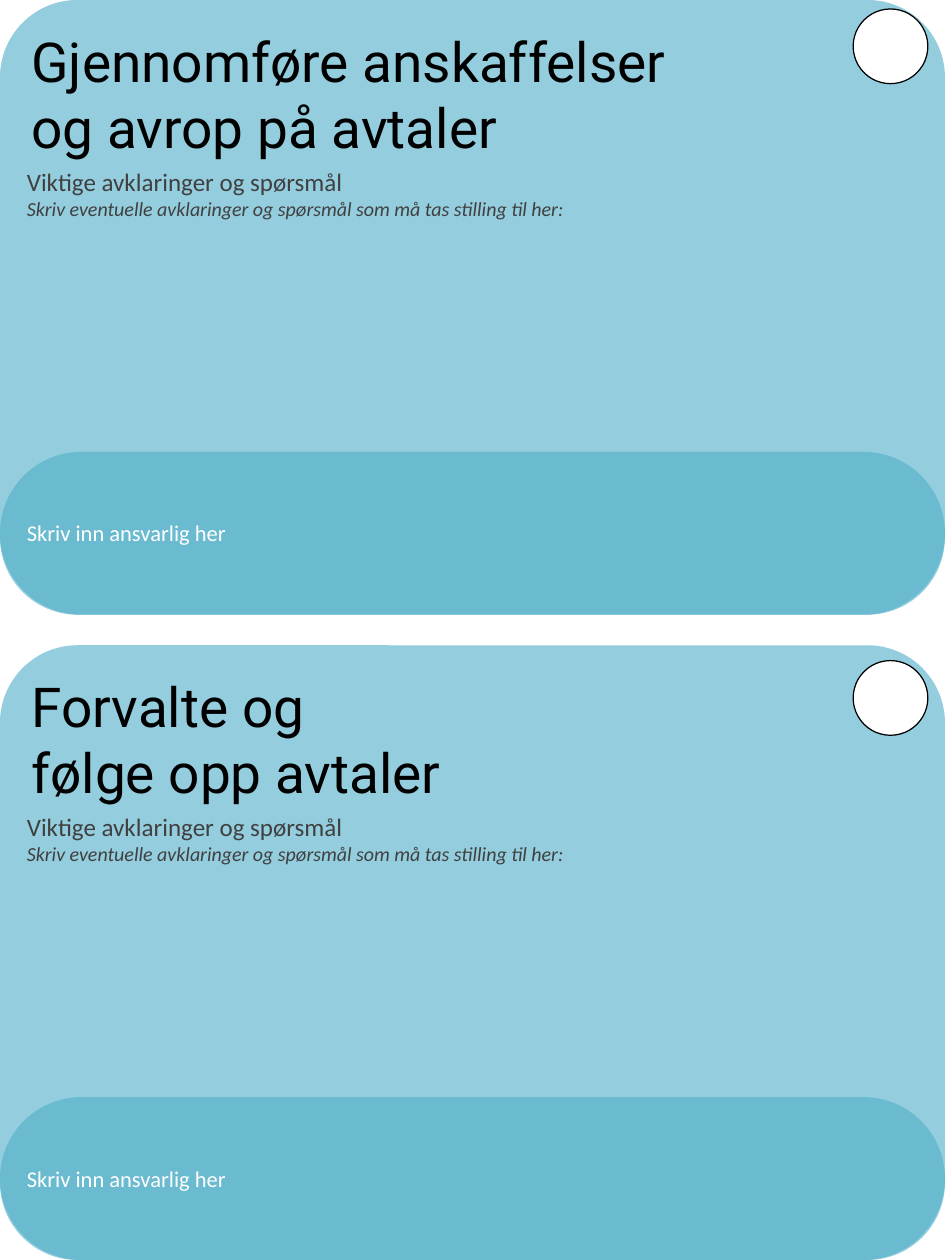
from lxml.etree import SubElement as Sub
from pptx import Presentation
from pptx.dml.color import RGBColor as Rgb
from pptx.enum.shapes import MSO_SHAPE as Kind
from pptx.enum.text import MSO_ANCHOR as Anchor, MSO_AUTO_SIZE as Auto, PP_ALIGN as Align
from pptx.oxml.ns import qn
from pptx.util import Inches, Pt

HUES = {"card": "93CDDE", "band": "6ABAD0", "white": "FFFFFF",
        "black": "000000", "grey": "404040"}
WIDE, TALL = 10.5, 14
HIGH, BAND, DOT = 6.83, 1.81, 0.83
CARDS = [
    ("Gjennomføre anskaffelser \vog avrop på avtaler", 0.1),
    ("Forvalte og \vfølge opp avtaler", 0.17),
]


def hue(name):
    """Return the named colour."""
    return Rgb.from_string(HUES[name])


def write(frame, text, first=True, size=18, font="Calibri", color="black",
          italic=False, before=None):
    """Put one formatted paragraph into a text frame."""
    para = frame.paragraphs[0] if first else frame.add_paragraph()
    para.text = text
    para.alignment = Align.LEFT
    if before:
        gap = Sub(para._p.get_or_add_pPr(), qn("a:spcBef"))
        Sub(gap, qn("a:spcPct")).set("val", str(before * 1000))
    for run in para.runs:
        face = run.font
        face.size, face.name, face.italic = Pt(size), font, italic
        face.color.rgb = hue(color)


def draw(slide, kind, box, fill, line=None, round=None):
    """Draw a filled preset shape in the box."""
    shape = slide.shapes.add_shape(kind, *map(Inches, box))
    shape.shadow.inherit = False
    shape.fill.solid()
    shape.fill.fore_color.rgb = hue(fill)
    if line:
        shape.line.color.rgb = hue(line)
        shape.line.width = Pt(1)
    else:
        shape.line.fill.background()
    if round is not None:
        shape.adjustments[0] = round
    return shape


def label(slide, box):
    """Add a wrapping text box and return its frame."""
    frame = slide.shapes.add_textbox(*map(Inches, box)).text_frame
    frame.word_wrap = True
    frame.auto_size = Auto.SHAPE_TO_FIT_TEXT
    return frame


def card(slide, box, title, drop):
    """Build one card with title, questions, owner band and dot."""
    left, top, width, high = box
    base = draw(slide, Kind.ROUNDED_RECTANGLE, box, "card", round=0.126)
    head = base.text_frame
    head.word_wrap = True
    head.vertical_anchor = Anchor.TOP
    write(head, title, size=44, font="Roboto", before=50)
    draw(slide, Kind.ROUNDED_RECTANGLE,
         (left, top + high - BAND, width, BAND), "band", round=0.5)

    notes = label(slide, (left + 0.2, top + 1.8, width - 0.2, 0.71))
    write(notes, "Viktige avklaringer og spørsmål", size=20, color="grey")
    write(notes, "Skriv eventuelle avklaringer og spørsmål som må tas stilling til her:",
          first=False, size=16, color="grey", italic=True)
    owner = label(slide, (left + 0.2, top + 5.72, 5.27, 0.4))
    write(owner, "Skriv inn ansvarlig her", color="white")
    draw(slide, Kind.OVAL, (left + width - 1.02, top + drop, DOT, DOT),
         "white", line="black")


def main():
    """Build the slide and save it."""
    deck = Presentation()
    deck.slide_width, deck.slide_height = Inches(WIDE), Inches(TALL)
    slide = deck.slides.add_slide(deck.slide_layouts[6])
    for row, (title, drop) in enumerate(CARDS):
        card(slide, (0, row * (TALL - HIGH), WIDE, HIGH), title, drop)
    deck.save("out.pptx")


if __name__ == "__main__":
    main()
